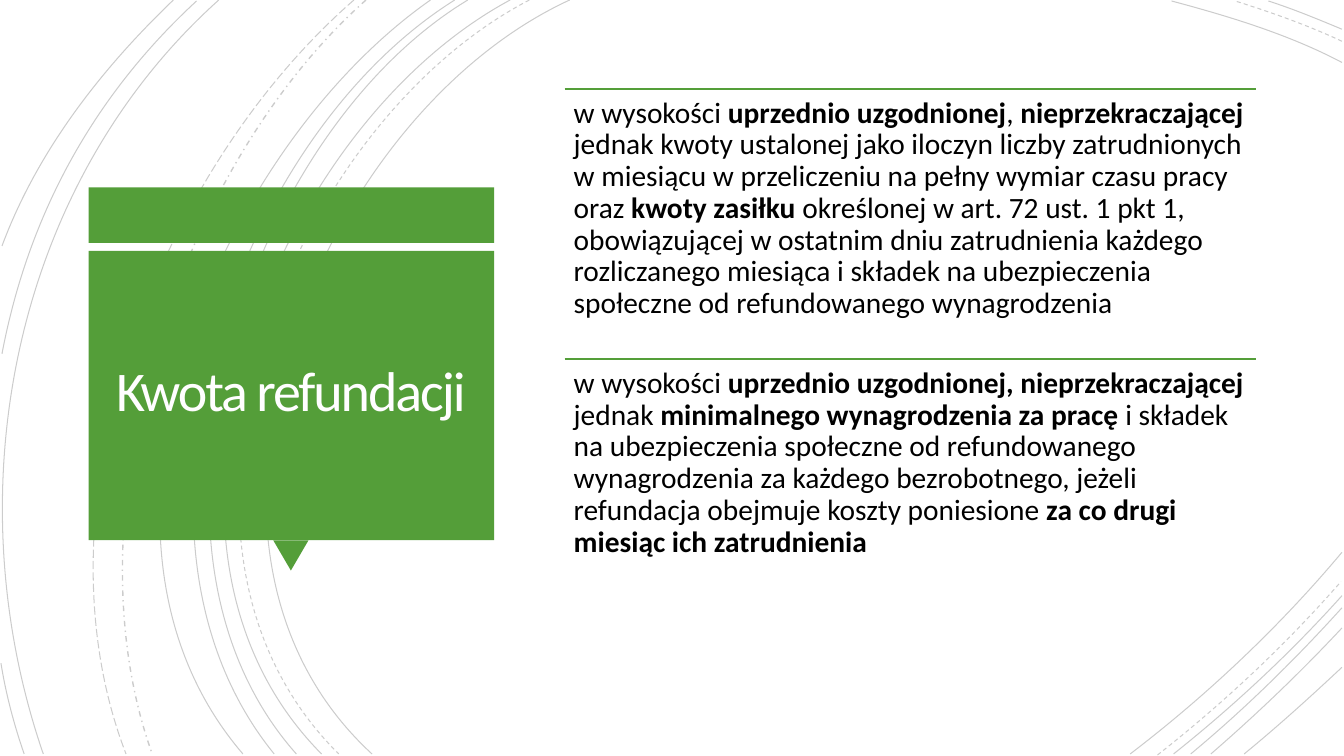
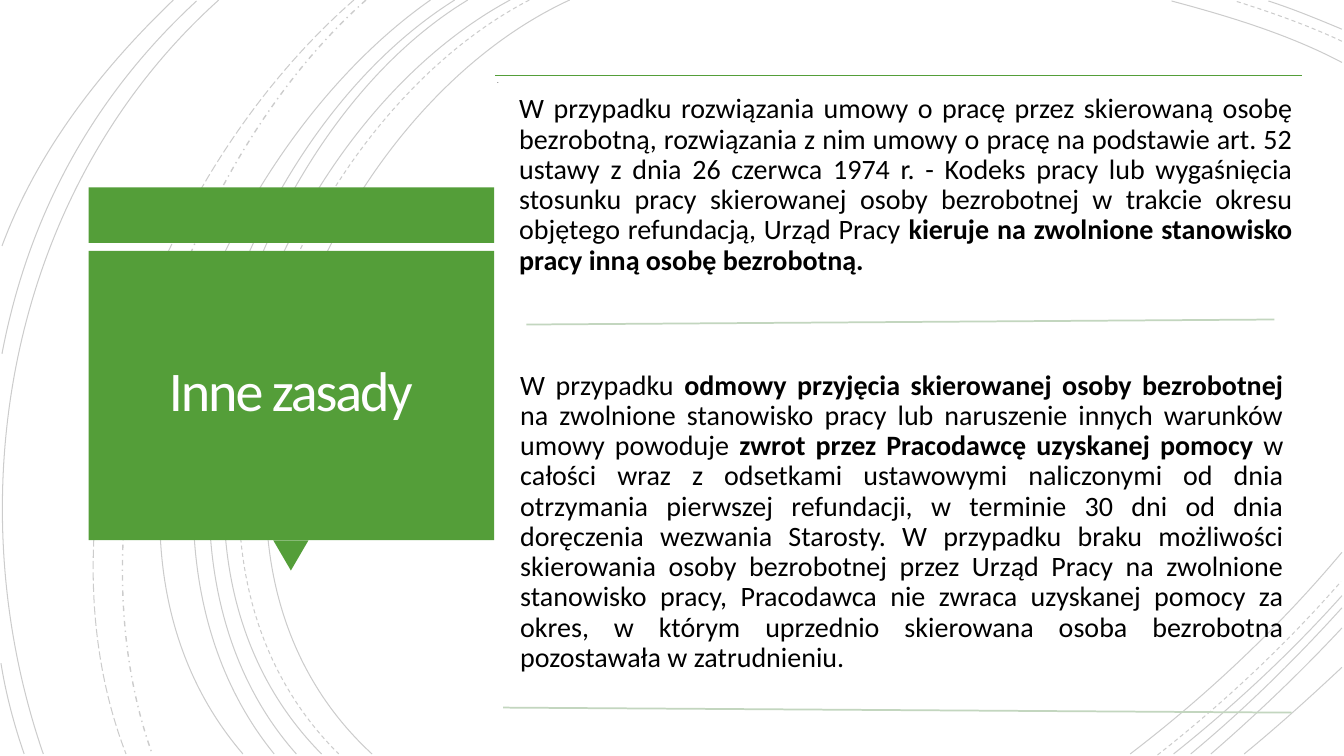
from lxml import etree
from pptx import Presentation
from pptx.dml.color import RGBColor
from pptx.enum.dml import MSO_LINE
from pptx.enum.shapes import MSO_CONNECTOR, MSO_SHAPE
from pptx.enum.text import MSO_ANCHOR, MSO_AUTO_SIZE, PP_ALIGN
from pptx.oxml.ns import qn
from pptx.util import Pt

PX = 9144  # EMU; 100 px to the inch
SLIDE_SIZE = (1333, 750)
TITLE_ONLY = 5

GREEN, PALE_GREEN = "549E39", "C3D6BF"
BLACK, WHITE = "000000", "FFFEFF"
BODY_FONT, ACCENT_FONT = "Calibri", "Roboto Slab"

SOLID, DASH = MSO_LINE.SOLID, MSO_LINE.DASH
LONG_DASH, DASH_DOT = MSO_LINE.LONG_DASH, MSO_LINE.DASH_DOT
LEFT, CENTER, JUSTIFY = PP_ALIGN.LEFT, PP_ALIGN.CENTER, PP_ALIGN.JUSTIFY

# Start, two control points, end; then dash and width in points
ARCS = [
    ((565, 0), (315, 115), (143, 540), (369, 748), SOLID, 0.75),
    ((1331, 62), (1278, 34), (1218, 16), (1162, 1), SOLID, 0.75),
    ((1121, 748), (1197, 690), (1269, 622), (1331, 548), SOLID, 0.75),
    ((525, 0), (285, 125), (123, 537), (336, 748), DASH, 0.75),
    ((1331, 41), (1297, 25), (1260, 12), (1225, 1), DASH, 0.75),
    ((1148, 749), (1213, 698), (1275, 640), (1330, 577), DASH, 0.75),
    ((506, 0), (270, 127), (110, 537), (319, 748), SOLID, 0.75),
    ((1331, 29), (1307, 19), (1283, 9), (1258, 1), SOLID, 0.75),
    ((1164, 748), (1223, 701), (1280, 648), (1331, 591), SOLID, 0.75),
    ((464, 0), (244, 133), (110, 541), (294, 748), SOLID, 0.75),
    ((1181, 748), (1234, 704), (1284, 655), (1331, 603), SOLID, 0.75),
    ((451, 0), (231, 138), (97, 533), (272, 748), SOLID, 0.75),
    ((1201, 748), (1246, 709), (1290, 667), (1331, 623), SOLID, 0.75),
    ((427, 0), (217, 147), (53, 529), (241, 748), SOLID, 0.75),
    ((1234, 748), (1267, 721), (1299, 692), (1331, 662), SOLID, 0.75),
    ((363, 0), (176, 166), (65, 509), (151, 748), DASH_DOT, 1),
    ((351, 0), (157, 169), (29, 499), (125, 748), LONG_DASH, 0.75),
    ((217, 0), (11, 185), (-46, 490), (43, 748), SOLID, 0.75),
    ((195, 1), (92, 96), (28, 214), (2, 351), SOLID, 0.75),
    ((1, 658), (6, 689), (14, 719), (24, 748), SOLID, 0.75),
    ((172, 0), (100, 69), (37, 150), (2, 244), SOLID, 0.75),
]

# Preset, box, rotation
TITLE_PANEL = [
    (MSO_SHAPE.RECTANGLE, (88, 186, 402, 55), 0),
    (MSO_SHAPE.ISOSCELES_TRIANGLE, (271, 536, 35, 30), 180),
    (MSO_SHAPE.RECTANGLE, (88, 249, 402, 287), 0),
]
TITLE_BOX = (97, 256, 383, 270)

# Bold passages stand between double asterisks
SLIDES = [
    {
        "title": "Kwota refundacji",
        "rules": [((560, 88), (1246, 88), GREEN), ((560, 356), (1246, 356), GREEN)],
        "texts": [
            ((560, 88, 686, 268), 9, LEFT, 21, BODY_FONT,
             "w wysokości **uprzednio uzgodnionej**, **nieprzekraczającej** jednak kwoty "
             "ustalonej jako iloczyn liczby zatrudnionych w miesiącu w przeliczeniu na pełny "
             "wymiar czasu pracy oraz **kwoty zasiłku **określonej w art. 72 ust. 1 pkt 1, "
             "obowiązującej w ostatnim dniu zatrudnienia każdego rozliczanego miesiąca i "
             "składek na ubezpieczenia społeczne od refundowanego wynagrodzenia"),
            ((560, 356, 686, 268), 9, LEFT, 21, BODY_FONT,
             "w wysokości **uprzednio uzgodnionej, nieprzekraczającej **jednak **minimalnego "
             "wynagrodzenia za pracę **i składek na ubezpieczenia społeczne od refundowanego "
             "wynagrodzenia za każdego bezrobotnego, jeżeli refundacja obejmuje koszty "
             "poniesione **za co drugi miesiąc ich zatrudnienia**"),
        ],
    },
    {
        "title": "Inne zasady",
        "rules": [
            ((491, 75), (1291, 75), GREEN),
            ((522, 322), (1264, 317), PALE_GREEN),
            ((499, 702), (1281, 707), PALE_GREEN),
        ],
        "texts": [
            ((491, 75, 5, 631), 2, LEFT, 5, ACCENT_FONT, "."),
            ((507, 86, 783, 260), 8, JUSTIFY, 20, BODY_FONT,
             "W przypadku rozwiązania umowy o pracę przez skierowaną osobę bezrobotną, "
             "rozwiązania z nim umowy o pracę na podstawie art. 52 ustawy z dnia 26 czerwca "
             "1974 r. - Kodeks pracy lub wygaśnięcia stosunku pracy skierowanej osoby "
             "bezrobotnej w trakcie okresu objętego refundacją, Urząd Pracy **kieruje na "
             "zwolnione stanowisko pracy inną osobę bezrobotną.**"),
            ((508, 360, 773, 329), 8, JUSTIFY, 20, BODY_FONT,
             "W przypadku **odmowy przyjęcia skierowanej osoby bezrobotnej **na zwolnione "
             "stanowisko pracy lub naruszenie innych warunków umowy powoduje **zwrot przez "
             "Pracodawcę uzyskanej pomocy **w całości wraz z odsetkami ustawowymi naliczonymi "
             "od dnia otrzymania pierwszej refundacji, w terminie 30 dni od dnia doręczenia "
             "wezwania Starosty. W przypadku braku możliwości skierowania osoby bezrobotnej "
             "przez Urząd Pracy na zwolnione stanowisko pracy, Pracodawca nie zwraca uzyskanej "
             "pomocy za okres, w którym uprzednio skierowana osoba bezrobotna pozostawała w "
             "zatrudnieniu."),
        ],
    },
]


def emu(lengths):
    return [length * PX for length in lengths]


def color(hex_string):
    return RGBColor.from_string(hex_string)


def add_arc(slide, start, control_1, control_2, end, dash, width):
    builder = slide.shapes.build_freeform(*start, scale=PX)
    builder.add_line_segments([control_1, control_2, end], close=False)
    shape = builder.convert_to_shape()
    # Join the three line segments into one cubic curve
    outline = next(shape.element.iter(qn("a:path")))
    segments = outline.findall(qn("a:lnTo"))
    curve = etree.SubElement(outline, qn("a:cubicBezTo"))
    for segment in segments:
        curve.append(segment[0])
        outline.remove(segment)
    shape.shadow.inherit = False
    shape.fill.background()
    shape.line.color.rgb = color(BLACK)
    shape.line.width = Pt(width)
    shape.line.dash_style = dash
    line_color = shape.element.spPr.find(qn("a:ln")).find(".//" + qn("a:srgbClr"))
    etree.SubElement(line_color, qn("a:alpha"), val="20000")
    return shape


def add_panel_part(slide, preset, box, rotation):
    shape = slide.shapes.add_shape(preset, *emu(box))
    shape.rotation = rotation
    shape.shadow.inherit = False
    shape.fill.solid()
    shape.fill.fore_color.rgb = color(GREEN)
    shape.line.fill.background()
    return shape


def furnish_layout(layout, slide):
    """Draw the shared background on a slide, then move it to the layout."""
    for placeholder in list(layout.placeholders):
        if placeholder.placeholder_format.idx != 0:
            layout.shapes.element.remove(placeholder.element)
    shapes = [add_arc(slide, *arc) for arc in ARCS]
    shapes += [add_panel_part(slide, *part) for part in TITLE_PANEL]
    for shape in shapes:
        layout.shapes.element.append(shape.element)


def format_frame(frame, inset, anchor):
    frame.word_wrap = True
    frame.auto_size = MSO_AUTO_SIZE.NONE
    frame.vertical_anchor = anchor
    frame.margin_left = frame.margin_right = inset * PX
    frame.margin_top = frame.margin_bottom = inset * PX


def format_paragraph(paragraph, alignment, spacing, size, font_name, font_color):
    paragraph.alignment = alignment
    paragraph.line_spacing = spacing
    paragraph.font.size = Pt(size)
    paragraph.font.name = font_name
    paragraph.font.color.rgb = color(font_color)


def set_title(slide, text):
    title = slide.shapes.title
    title.left, title.top, title.width, title.height = emu(TITLE_BOX)
    format_frame(title.text_frame, 10, MSO_ANCHOR.MIDDLE)
    paragraph = title.text_frame.paragraphs[0]
    run = paragraph.add_run()
    run.text = text
    run.font._element.set("spc", "-150")
    format_paragraph(paragraph, CENTER, 0.85, 40, BODY_FONT, WHITE)


def add_rule(slide, start, end, line_color):
    rule = slide.shapes.add_connector(MSO_CONNECTOR.STRAIGHT, *emu(start + end))
    rule.line.color.rgb = color(line_color)
    rule.line.width = Pt(1.25)
    etree.SubElement(rule.element.spPr, qn("a:effectLst"))


def add_text(slide, box, inset, alignment, size, font_name, text):
    frame = slide.shapes.add_textbox(*emu(box)).text_frame
    format_frame(frame, inset, MSO_ANCHOR.TOP)
    paragraph = frame.paragraphs[0]
    format_paragraph(paragraph, alignment, 0.9, size, font_name, BLACK)
    for index, passage in enumerate(text.split("**")):
        if passage:
            run = paragraph.add_run()
            run.text = passage
            if index % 2:
                run.font.bold = True


def main():
    presentation = Presentation()
    presentation.slide_width, presentation.slide_height = emu(SLIDE_SIZE)
    layout = presentation.slide_layouts[TITLE_ONLY]
    slides = [presentation.slides.add_slide(layout) for _ in SLIDES]
    furnish_layout(layout, slides[0])
    for slide, content in zip(slides, SLIDES):
        set_title(slide, content["title"])
        for rule in content["rules"]:
            add_rule(slide, *rule)
        for text in content["texts"]:
            add_text(slide, *text)
    presentation.save("out.pptx")


if __name__ == "__main__":
    main()
